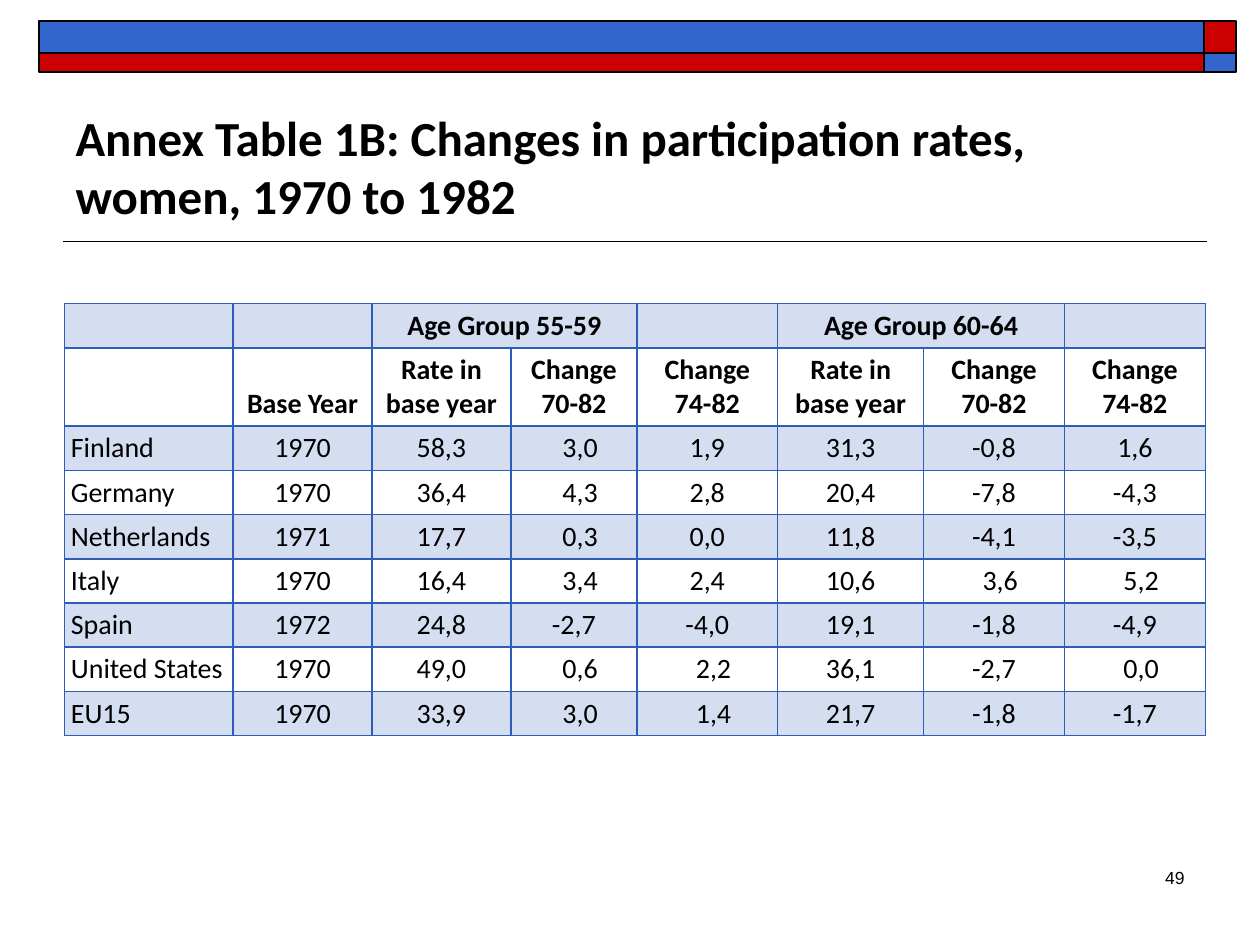
from dataclasses import dataclass

import lxml.etree
import pptx
import pptx.dml.color
import pptx.enum.shapes
import pptx.enum.text
import pptx.oxml
import pptx.oxml.ns
import pptx.util

Cm = pptx.util.Cm
Pt = pptx.util.Pt
RGB = pptx.dml.color.RGBColor.from_string
qn = pptx.oxml.ns.qn
Align = pptx.enum.text.PP_ALIGN
Anchor = pptx.enum.text.MSO_ANCHOR


@dataclass(frozen=True)
class Theme:
    ink: str = "000000"
    blue: str = "3366CC"
    red: str = "CC0000"
    grid: str = "2D5CB9"
    band_alpha: int = 20000
    body_font: str = "Calibri"
    number_font: str = "Arial"
    title_size: int = 28
    table_size: int = 16
    number_size: int = 10
    line: int = 1


theme = Theme()


def write(frame, text, font=theme.body_font, size=theme.table_size,
          bold=False, align=Align.LEFT):
    """Fill a text frame, one paragraph for each line of text."""
    frame.text = text
    for paragraph in frame.paragraphs:
        paragraph.alignment = align
        for run in paragraph.runs:
            run.font.name = font
            run.font.size = Pt(size)
            run.font.bold = bold
            run.font.color.rgb = RGB(theme.ink)
        # An empty cell takes its height from the end-of-paragraph size.
        paragraph._p.get_or_add_endParaRPr().set("sz", str(size * 100))


def style_cell(cell, banded):
    """Draw the grid lines of a cell, then its translucent or empty fill."""
    properties = cell._tc.get_or_add_tcPr()
    for side in ("a:lnL", "a:lnR", "a:lnT", "a:lnB"):
        edge = lxml.etree.SubElement(properties, qn(side), w=str(Pt(theme.line)))
        paint = lxml.etree.SubElement(edge, qn("a:solidFill"))
        lxml.etree.SubElement(paint, qn("a:srgbClr"), val=theme.grid)
    if banded:
        cell.fill.solid()
        cell.fill.fore_color.rgb = RGB(theme.grid)
        colour = properties.find(qn("a:solidFill")).find(qn("a:srgbClr"))
        lxml.etree.SubElement(colour, qn("a:alpha"), val=str(theme.band_alpha))
    else:
        cell.fill.background()


deck = pptx.Presentation()
deck.slide_width = Cm(25.4)
deck.slide_height = Cm(19.05)
slide = deck.slides.add_slide(deck.slide_layouts[5])

# Rule below the title and the two-colour banner
rule = slide.shapes.add_connector(
    pptx.enum.shapes.MSO_CONNECTOR.STRAIGHT, Cm(24.33), Cm(4.87), Cm(1.27), Cm(4.87))
rule.line.color.rgb = RGB(theme.ink)
rule.line.width = Pt(theme.line)
lxml.etree.SubElement(rule._element.spPr, qn("a:effectLst"))

banner_columns = [(0.78, 23.5), (24.28, 0.64)]
banner_rows = [(0.43, 0.64, (theme.blue, theme.red)),
               (1.07, 0.38, (theme.red, theme.blue))]
for top, height, colours in banner_rows:
    for (left, width), colour in zip(banner_columns, colours):
        block = slide.shapes.add_shape(
            pptx.enum.shapes.MSO_SHAPE.RECTANGLE,
            Cm(left), Cm(top), Cm(width), Cm(height))
        block.shadow.inherit = False
        block.fill.solid()
        block.fill.fore_color.rgb = RGB(colour)
        block.line.color.rgb = RGB(theme.ink)
        block.line.width = Pt(theme.line)

# Title
title = slide.shapes.title
title.left, title.top, title.width, title.height = Cm(1.27), Cm(1.48), Cm(22.86), Cm(3.18)
title.text_frame.auto_size = pptx.enum.text.MSO_AUTO_SIZE.NONE
title.text_frame.vertical_anchor = Anchor.BOTTOM
write(title.text_frame,
      "Annex Table 1B: Changes in participation rates, women, 1970 to 1982",
      size=theme.title_size, bold=True)

# Participation rates; a leading ">" marks a value set slightly to the right
rates = [
    ["", "", "Age Group 55-59", "", "", "Age Group 60-64", "", ""],
    ["", "Base Year"] + ["Rate in\nbase year", "Change\n70-82", "Change\n74-82"] * 2,
    ["Finland", "1970", "58,3", ">3,0", "1,9", "31,3", "-0,8", "1,6"],
    ["Germany", "1970", "36,4", ">4,3", "2,8", "20,4", "-7,8", "-4,3"],
    ["Netherlands", "1971", "17,7", ">0,3", "0,0", "11,8", "-4,1", "-3,5"],
    ["Italy", "1970", "16,4", ">3,4", "2,4", "10,6", ">3,6", ">5,2"],
    ["Spain", "1972", "24,8", "-2,7", "-4,0", "19,1", "-1,8", "-4,9"],
    ["United States", "1970", "49,0", ">0,6", ">2,2", "36,1", "-2,7", ">0,0"],
    ["EU15", "1970", "33,9", ">3,0", ">1,4", "21,7", "-1,8", "-1,7"],
]
column_widths = [3.4, 2.8, 2.8, 2.54, 2.84, 2.94, 2.84, 2.84]
row_heights = [0.89, 1.57] + [0.89] * 7
header_rows = 2
indent = 0.25

table = slide.shapes.add_table(
    len(rates), len(column_widths), Cm(1.3), Cm(6.12),
    Cm(sum(column_widths)), Cm(sum(row_heights))).table
table.first_row = False
table.horz_banding = False
for column, width in zip(table.columns, column_widths):
    column.width = Cm(width)
for row, height in zip(table.rows, row_heights):
    row.height = Cm(height)

for r, values in enumerate(rates):
    for c, value in enumerate(values):
        cell = table.cell(r, c)
        cell.margin_left = Cm(0.13 + indent * value.startswith(">"))
        cell.margin_right = Cm(0.13)
        cell.margin_top = cell.margin_bottom = Cm(0.1)
        cell.vertical_anchor = Anchor.BOTTOM
        write(cell.text_frame, value.lstrip(">"), bold=r < header_rows,
              align=Align.CENTER if c else Align.LEFT)
        style_cell(cell, banded=r % 2 == 0)
for group_start in (2, 5):
    table.cell(0, group_start).merge(table.cell(0, group_start + 1))

# Slide number
number = slide.shapes.add_textbox(Cm(18.85), Cm(17.35), Cm(5.28), Cm(1.27))
number.text_frame.word_wrap = True
write(number.text_frame, "49", font=theme.number_font,
      size=theme.number_size, align=Align.RIGHT)

deck.save("out.pptx")
